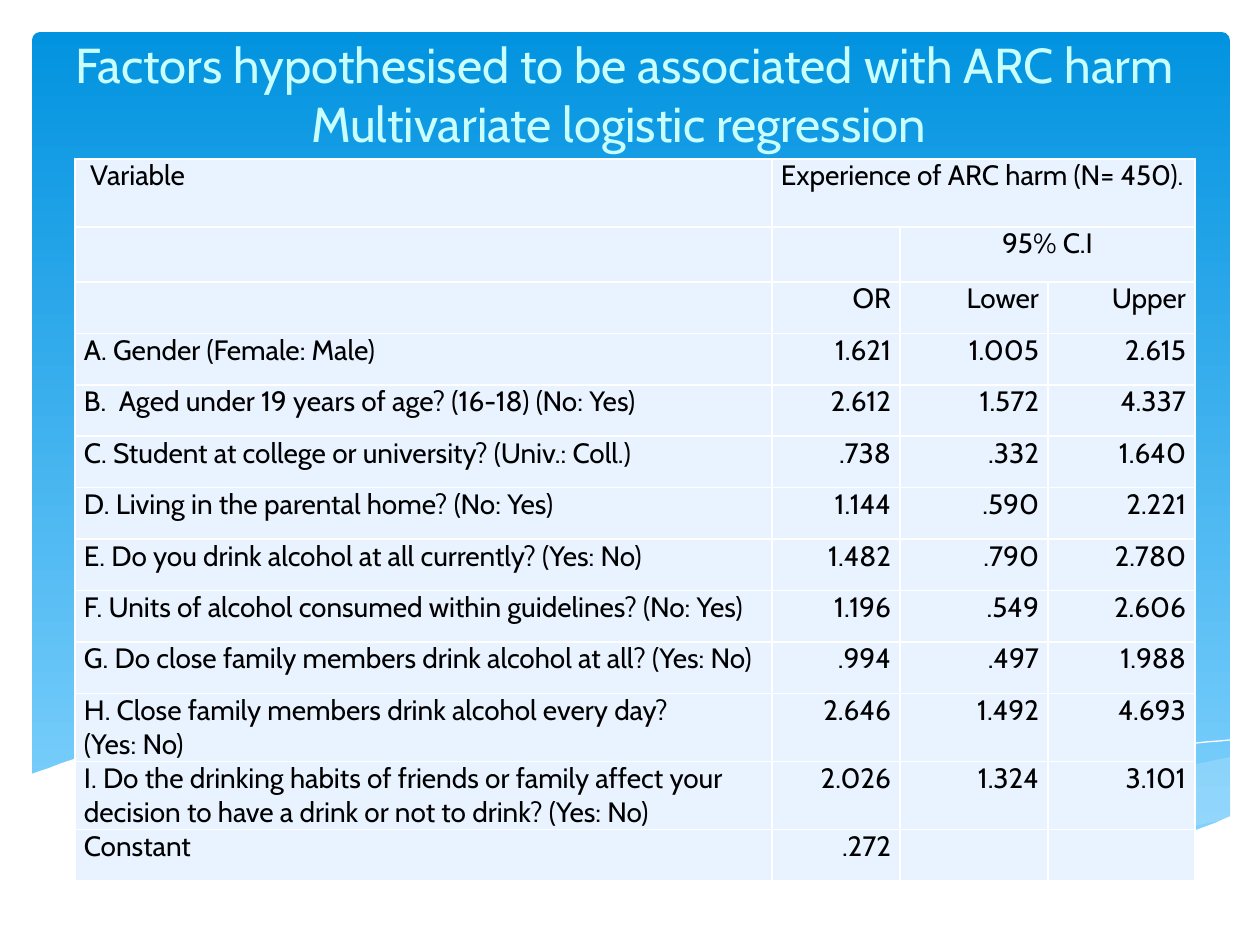
from lxml import etree
from pptx import Presentation
from pptx.dml.color import RGBColor
from pptx.enum.shapes import MSO_SHAPE
from pptx.enum.text import MSO_ANCHOR, MSO_AUTO_SIZE, PP_ALIGN
from pptx.oxml.ns import qn
from pptx.util import Pt

LEFT, CENTER, RIGHT = PP_ALIGN.LEFT, PP_ALIGN.CENTER, PP_ALIGN.RIGHT
ROUNDED = MSO_SHAPE.ROUNDED_RECTANGLE
BOTTOM, NO_FIT = MSO_ANCHOR.BOTTOM, MSO_AUTO_SIZE.NONE

COLORS = {
    "sky_top": "0293E0", "sky_bottom": "83D3FE", "mist": "C6E7FC",
    "white": "FFFFFF", "title": "C8FEFD", "cell": "E8F3FF", "text": "000000",
}
FONT = "Cabin"

TITLE = ("Factors hypothesised to be associated with ARC harm "
         "Multivariate logistic regression ")
HEADER = [
    (" Variable", "Experience of ARC harm (N= 450).", "", ""),
    ("", "", "95% C.I", ""),
    ("", "OR", "Lower", "Upper"),
]
FACTORS = [
    ("A. Gender (Female: Male)", "1.621", "1.005", "2.615"),
    ("B.  Aged under 19 years of age? (16-18) (No: Yes)", "2.612", "1.572", "4.337"),
    ("C. Student at college or university? (Univ.: Coll.)", ".738", ".332", "1.640"),
    ("D. Living in the parental home? (No: Yes)", "1.144", ".590", "2.221"),
    ("E. Do you drink alcohol at all currently? (Yes: No)", "1.482", ".790", "2.780"),
    ("F. Units of alcohol consumed within guidelines? (No: Yes)", "1.196", ".549", "2.606"),
    ("G. Do close family members drink alcohol at all? (Yes: No)", ".994", ".497", "1.988"),
    ("H. Close family members drink alcohol every day?\n(Yes: No)", "2.646", "1.492", "4.693"),
    ("I. Do the drinking habits of friends or family affect your decision "
     "to have a drink or not to drink? (Yes: No)", "2.026", "1.324", "3.101"),
    ("Constant", ".272", "", ""),
]
ROWS = HEADER + FACTORS
HEADINGS = {(0, 1): LEFT, (1, 2): CENTER}  # each spans to the last column

# Lengths in px, 126 to the inch
PX = 914400 // 126
SLIDE = (1260, 945)
SKY_BOX = (32, 32, 1198, 832)
TITLE_BOX = (44, 56, 1160, 103)
TABLE_BOX = (75, 159, 1120, 722)
COL_WIDTHS = (697, 128, 148, 147)
TALL_ROWS = {0: 68, 1: 55, 10: 68, 11: 68}  # the other rows share what is left
CELL_MARGINS = {"margin_left": 9 * PX, "margin_right": 9 * PX,
                "margin_top": 0, "margin_bottom": 0}

# Each wave edge is a smooth curve through a few knots.
EDGES = {
    "right_top": [(1230, 757), (1086, 788), (834, 840)],
    "right_bottom": [(834, 840), (1027, 857), (1231, 818)],
    "swell_top": [(1126, 851), (794, 786), (586, 747), (362, 747)],
    "swell_bottom": [(362, 747), (567, 786), (839, 842), (1126, 851)],
    "falling_line": [(391, 752), (545, 742), (803, 769), (1144, 848)],
    "rising_line": [(774, 830), (979, 779), (1130, 751), (1230, 740)],
    "shore": [(1231, 816), (1159, 840), (1019, 856), (816, 837), (563, 784),
              (368, 746), (203, 738), (107, 750), (29, 775)],
    "slide_foot": [(29, 921), (1231, 921)],
}
WAVES = [  # back to front: edges, fill (None for an open line), opacity in percent
    (("right_top", "right_bottom"), "mist", 29),
    (("swell_top", "swell_bottom"), "mist", 40),
    (("falling_line",), None, 100),
    (("rising_line",), None, 100),
    (("shore", "slide_foot"), "white", 100),
]


def px(values):
    return [v * PX for v in values]


def rgb(name):
    return RGBColor.from_string(COLORS[name])


def smooth(knots, steps=6):
    """Points of a Catmull-Rom curve through the knots."""
    padded = [knots[0], *knots, knots[-1]]
    points = [knots[0]]
    for a, b, c, d in zip(padded, padded[1:], padded[2:], padded[3:]):
        for i in range(1, steps + 1):
            t = i / steps
            points.append(tuple(
                (2 * q + (r - p) * t + (2 * p - 5 * q + 4 * r - s) * t ** 2
                 + (3 * q - p - 3 * r + s) * t ** 3) / 2
                for p, q, r, s in zip(a, b, c, d)))
    return points


def style(p, size, color, align):
    p.alignment = align
    for r in p.runs:
        for key, value in {"name": FONT, "size": Pt(size), "bold": False}.items():
            setattr(r.font, key, value)
        r.font.color.rgb = rgb(color)


def add_sky(slide):
    sp = slide.shapes.add_shape(ROUNDED, *px(SKY_BOX))
    sp.adjustments[0] = 0.01
    sp.shadow.inherit = False
    sp.line.fill.background()
    sp.fill.gradient()
    sp.fill.gradient_angle = 270
    for stop, name in zip(sp.fill.gradient_stops, ("sky_top", "sky_bottom")):
        stop.color.rgb = rgb(name)


def add_wave(slide, edges, fill, opacity):
    points = [point for edge in edges for point in smooth(EDGES[edge])]
    builder = slide.shapes.build_freeform(*points[0], scale=PX)
    builder.add_line_segments(points[1:], close=fill is not None)
    sp = builder.convert_to_shape()
    sp.shadow.inherit = False
    if fill is None:
        sp.fill.background()
        sp.line.color.rgb = rgb("white")
        sp.line.width = Pt(0)
        return
    sp.line.fill.background()
    sp.fill.solid()
    sp.fill.fore_color.rgb = rgb(fill)
    if opacity < 100:
        color = sp._element.spPr.find(f".//{qn('a:srgbClr')}")
        etree.SubElement(color, qn("a:alpha"), val=str(opacity * 1000))


def add_title(slide):
    sp = slide.shapes.title
    sp.left, sp.top, sp.width, sp.height = px(TITLE_BOX)
    tf = sp.text_frame
    tf.text = TITLE
    frame = {"word_wrap": True, "auto_size": NO_FIT, "vertical_anchor": BOTTOM}
    for key, value in frame.items():
        setattr(tf, key, value)
    style(tf.paragraphs[0], 28, "title", CENTER)
    sp._element.getparent().append(sp._element)  # in front of the sky


def add_borders(cell):
    tc_pr = cell._tc.get_or_add_tcPr()
    for i, side in enumerate(("lnL", "lnR", "lnT", "lnB")):
        ln = etree.Element(qn(f"a:{side}"), w=str(Pt(1)))
        fill = etree.SubElement(ln, qn("a:solidFill"))
        etree.SubElement(fill, qn("a:srgbClr"), val=COLORS["white"])
        tc_pr.insert(i, ln)


def fill_cell(cell, text, align):
    for key, value in CELL_MARGINS.items():
        setattr(cell, key, value)
    cell.fill.solid()
    cell.fill.fore_color.rgb = rgb("cell")
    add_borders(cell)
    if text:
        cell.text = text
    for p in cell.text_frame.paragraphs:
        style(p, 16, "text", align)


def add_results(slide):
    table = slide.shapes.add_table(len(ROWS), len(COL_WIDTHS), *px(TABLE_BOX)).table
    table.first_row = table.horz_banding = False
    for col, width in zip(table.columns, px(COL_WIDTHS)):
        col.width = width
    spare = TABLE_BOX[3] - sum(TALL_ROWS.values())
    row_height = spare * PX // (len(ROWS) - len(TALL_ROWS))
    for i, texts in enumerate(ROWS):
        table.rows[i].height = TALL_ROWS[i] * PX if i in TALL_ROWS else row_height
        for j, text in enumerate(texts):
            fill_cell(table.cell(i, j), text, HEADINGS.get((i, j), RIGHT if j else LEFT))
    for i, j in HEADINGS:
        table.cell(i, j).merge(table.cell(i, len(COL_WIDTHS) - 1))


def main():
    prs = Presentation()
    prs.slide_width, prs.slide_height = px(SLIDE)
    slide = prs.slides.add_slide(prs.slide_layouts[5])
    add_sky(slide)
    for wave in WAVES:
        add_wave(slide, *wave)
    add_title(slide)
    add_results(slide)
    prs.save("out.pptx")


if __name__ == "__main__":
    main()
